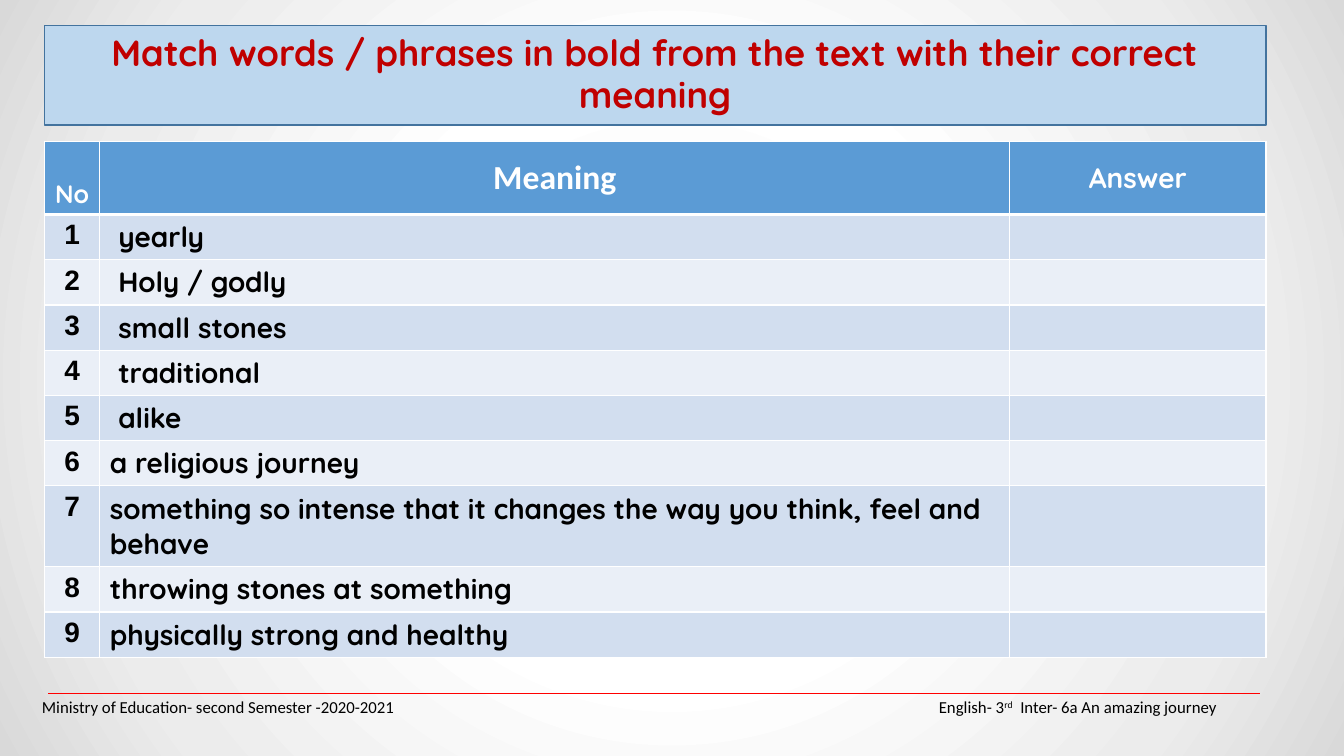
from dataclasses import dataclass

from pptx import Presentation
from pptx.dml.color import RGBColor
from pptx.enum.shapes import MSO_CONNECTOR, MSO_SHAPE
from pptx.enum.text import MSO_ANCHOR, PP_ALIGN
from pptx.oxml import parse_xml
from pptx.oxml.ns import nsdecls
from pptx.util import Pt

LEFT, CENTER = PP_ALIGN.LEFT, PP_ALIGN.CENTER
TOP, MIDDLE, BOTTOM = MSO_ANCHOR.TOP, MSO_ANCHOR.MIDDLE, MSO_ANCHOR.BOTTOM
RECT, LINE = MSO_SHAPE.RECTANGLE, MSO_CONNECTOR.STRAIGHT


@dataclass(frozen=True)
class Theme:
    white: str = "FFFFFF"
    black: str = "000000"
    red: str = "C00000"
    rule: str = "FF0000"
    banner: str = "BDD7EE"
    edge: str = "43739E"
    head: str = "5B9BD5"
    bands: tuple = ("D2DEEF", "EAEFF7")
    glow: tuple = ((0, "F2F2F2"), (39, "FFFFFF"), (78, "ECECEC"), (100, "D9D9D9"))
    main: str = "Quicksand"
    plain: str = "Calibri"
    digit: str = "Arial"
    title: int = 26
    large: int = 24
    body: int = 20
    small: int = 18
    foot: int = 12


THEME = Theme()
X, WIDTH = 31.7, 872.6
COLS = (39.6, 650, 183)
HEAD_H, ROW_H, TALL_H = 52.4, 32.25, 57.8

# Meaning and its left indent
WORDS = (
    ("yearly", 6),
    ("Holy / godly", 6),
    ("small stones", 6),
    ("traditional", 6),
    ("alike", 6),
    ("a religious journey", 0),
    ("something so intense that it changes the way you think, feel and behave", 0),
    ("throwing stones at something", 0),
    ("physically strong and healthy", 0),
)
TALL = 7


def color(code):
    return RGBColor.from_string(code)


def write(frame, text, font=THEME.main, size=THEME.body, ink=THEME.black,
          bold=True, align=LEFT, space=1.0):
    """Fill a frame; text is a string or (string, raised) pairs."""
    frame.word_wrap = True
    para = frame.paragraphs[0]
    para.alignment = align
    para.line_spacing = space
    parts = ((text, False),) if isinstance(text, str) else text
    for part, raised in parts:
        run = para.add_run()
        run.text = part
        run.font.name = font
        run.font.size = Pt(size)
        run.font.bold = bold
        run.font.color.rgb = color(ink)
        if raised:
            run.font._element.set("baseline", "30000")


def backdrop(slide):
    stops = "".join(f'<a:gs pos="{pos * 1000}"><a:srgbClr val="{code}"/></a:gs>'
                    for pos, code in THEME.glow)
    slide._element.cSld.insert(0, parse_xml(
        f'<p:bg {nsdecls("p", "a")}><p:bgPr><a:gradFill rotWithShape="1">'
        f'<a:gsLst>{stops}</a:gsLst><a:path path="circle">'
        '<a:fillToRect l="50000" t="50000" r="50000" b="50000"/></a:path>'
        '</a:gradFill><a:effectLst/></p:bgPr></p:bg>'))


def banner(slide, text):
    box = slide.shapes.add_shape(RECT, Pt(X), Pt(18), Pt(WIDTH), Pt(71.3))
    box.shadow.inherit = False
    box.fill.solid()
    box.fill.fore_color.rgb = color(THEME.banner)
    box.line.color.rgb = color(THEME.edge)
    box.line.width = Pt(1)
    box.text_frame.vertical_anchor = MIDDLE
    write(box.text_frame, text, size=THEME.title, ink=THEME.red,
          align=CENTER, space=0.95)


def paint(cell, fill, base=1):
    """Set a cell's fill and white borders."""
    cell.fill.solid()
    cell.fill.fore_color.rgb = color(fill)
    props = cell._tc.get_or_add_tcPr()
    for spot, (side, width) in enumerate(zip("LRTB", (1, 1, 1, base))):
        props.insert(spot, parse_xml(
            f'<a:ln{side} {nsdecls("a")} w="{Pt(width)}"><a:solidFill>'
            f'<a:srgbClr val="{THEME.white}"/></a:solidFill></a:ln{side}>'))


def grid(slide):
    high = [HEAD_H] + [ROW_H] * len(WORDS)
    high[TALL] = TALL_H
    table = slide.shapes.add_table(len(high), len(COLS), Pt(X), Pt(100.8),
                                   Pt(WIDTH), Pt(sum(high))).table
    for col, width in zip(table.columns, COLS):
        col.width = Pt(width)
    for row, height in zip(table.rows, high):
        row.height = Pt(height)

    # Header row
    heads = (("No", THEME.main, THEME.small, BOTTOM),
             ("Meaning", THEME.plain, THEME.large, MIDDLE),
             ("Answer", THEME.main, THEME.body, MIDDLE))
    for col, (text, font, size, anchor) in enumerate(heads):
        cell = table.cell(0, col)
        paint(cell, THEME.head, base=3)
        cell.vertical_anchor = anchor
        write(cell.text_frame, text, font=font, size=size,
              ink=THEME.white, align=CENTER)

    # Numbered rows
    for num, (text, inset) in enumerate(WORDS, 1):
        cells = table.rows[num].cells
        for cell in cells:
            paint(cell, THEME.bands[(num - 1) % 2])
            cell.vertical_anchor = TOP
        write(cells[0].text_frame, str(num), font=THEME.digit, align=CENTER)
        cells[1].margin_left = Pt(7.2 + inset)
        write(cells[1].text_frame, text)


def note(slide, text, left, width):
    box = slide.shapes.add_textbox(Pt(left), Pt(494), Pt(width), Pt(22))
    box.text_frame.vertical_anchor = MIDDLE
    write(box.text_frame, text, font=THEME.plain, size=THEME.foot, bold=False)


def rule(slide, left, right, top):
    line = slide.shapes.add_connector(LINE, Pt(left), Pt(top), Pt(right), Pt(top))
    line.line.color.rgb = color(THEME.rule)
    line.line.width = Pt(0.5)
    line._element.spPr.append(parse_xml(f'<a:effectLst {nsdecls("a")}/>'))


def main():
    deck = Presentation()
    deck.slide_width, deck.slide_height = Pt(960), Pt(540)
    slide = deck.slides.add_slide(deck.slide_layouts[6])
    backdrop(slide)
    grid(slide)
    banner(slide, "Match words / phrases in bold from the text with their correct meaning")

    # Footer
    rule(slide, 34.5, 900, 495)
    note(slide, "Ministry of Education- second Semester -2020-2021", 22.8, 300)
    note(slide, (("English- 3", False), ("rd", True),
                 ("  Inter- 6a An amazing journey", False)), 663.5, 240)
    deck.save("out.pptx")


if __name__ == "__main__":
    main()
